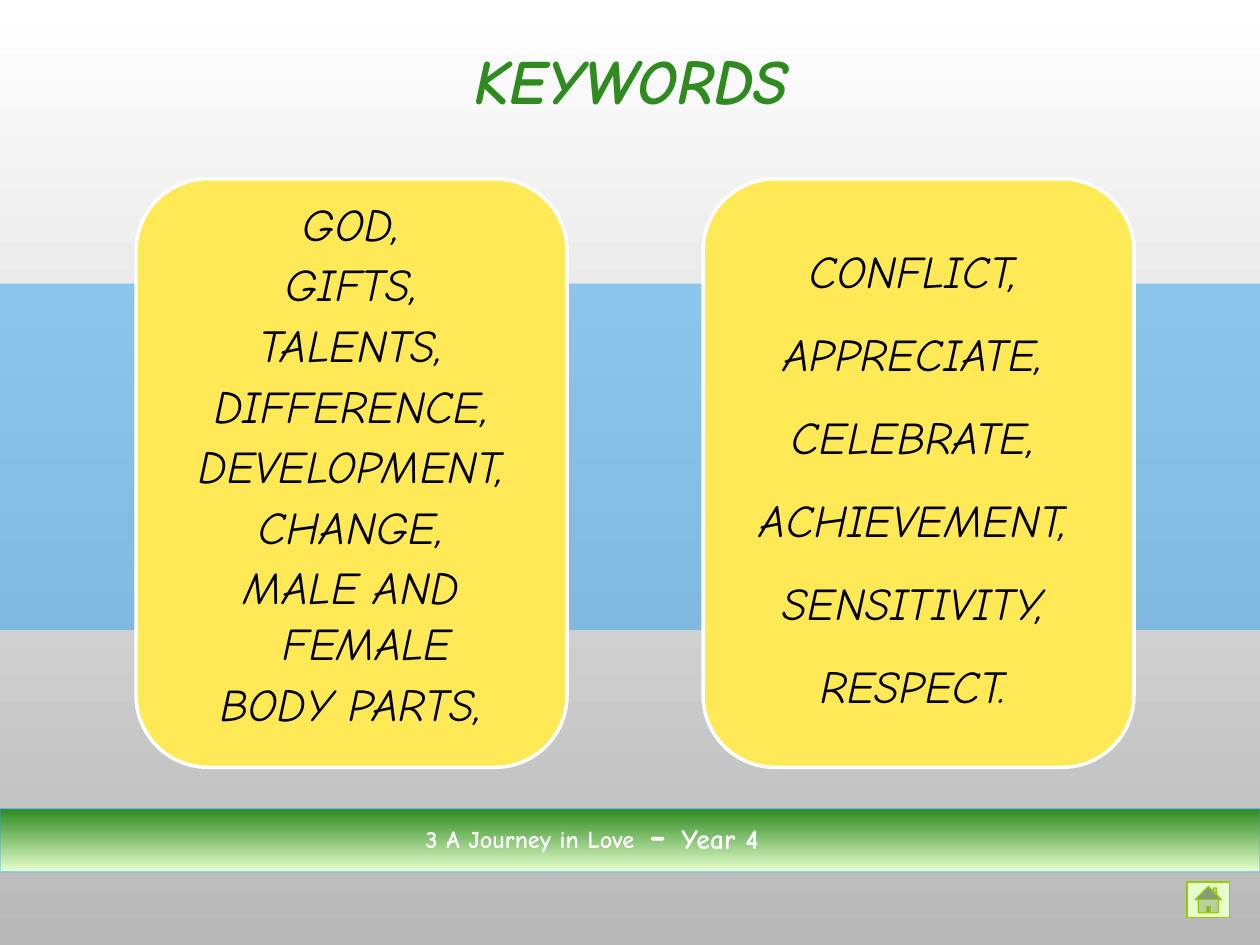
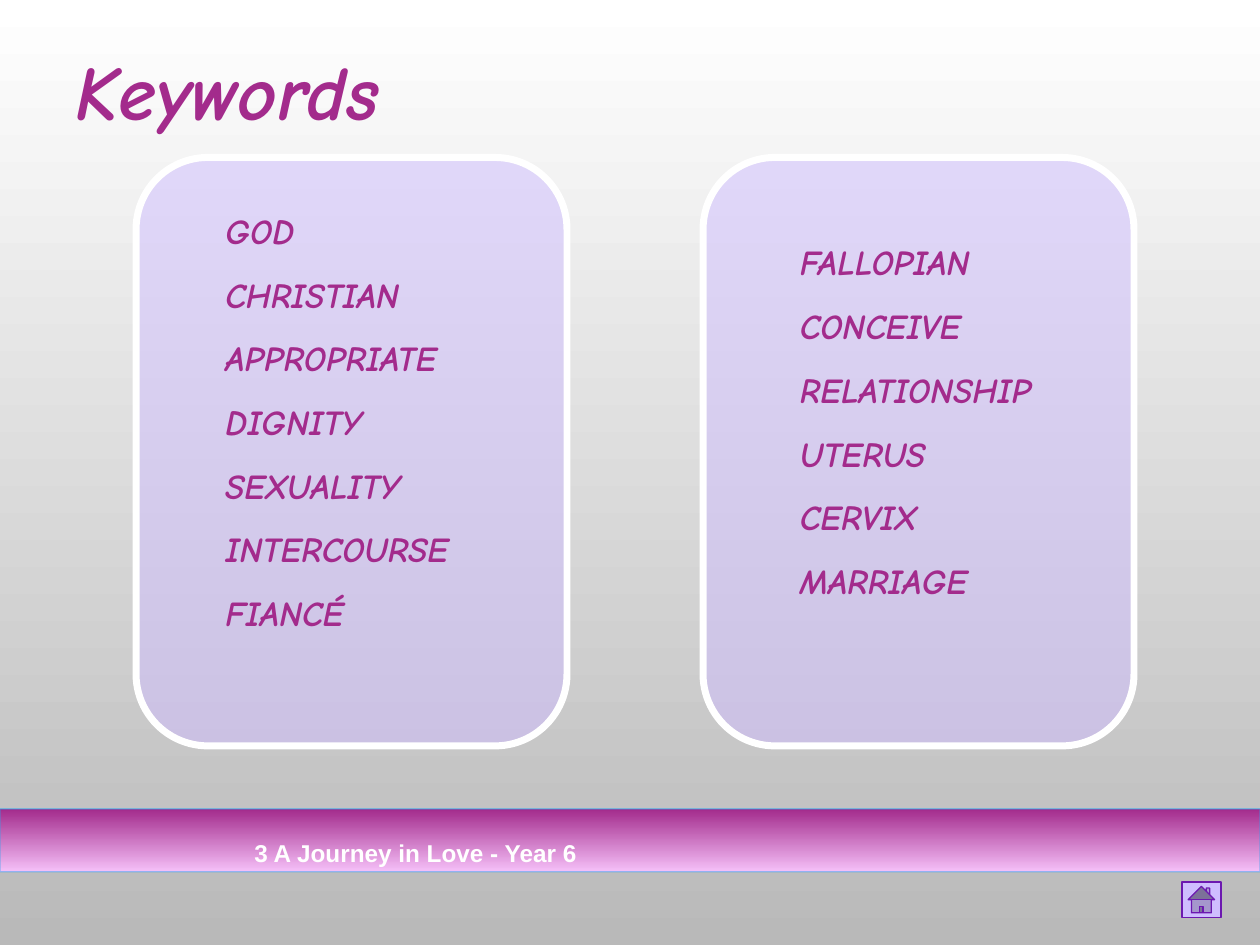
from dataclasses import dataclass, field
from typing import Any

from lxml import etree
from pptx import Presentation
from pptx.dml.color import RGBColor
from pptx.enum.shapes import MSO_SHAPE
from pptx.enum.text import MSO_ANCHOR, PP_ALIGN
from pptx.oxml.ns import qn
from pptx.util import Inches, Pt

RECTANGLE = MSO_SHAPE.RECTANGLE
ROUNDED = MSO_SHAPE.ROUNDED_RECTANGLE
HOME = MSO_SHAPE.ACTION_BUTTON_HOME
TOP, MIDDLE = MSO_ANCHOR.TOP, MSO_ANCHOR.MIDDLE
LEFT, CENTER = PP_ALIGN.LEFT, PP_ALIGN.CENTER

COLORS = {
    "white": "FFFFFF",
    "grey": "B9B9B9",
    "black": "000000",
    "sky": "2FA3EE",
    "yellow": "FFE957",
    "green": "2F8B20",
    "mint": "E6FFCF",
    "lime": "99CC00",
    "magenta": "A32B8C",
    "pink": "F5C0F8",
    "lilac": "CFBDFF",
    "violet": "6C18B0",
}
SCRIPT_FONT = "Comic Neue"
CARD_LEFT, CARD_PITCH = 1.08, 4.5
CARD_WIDTH, CARD_HEIGHT = 3.42, 4.67
HANGING_INDENT = 0.25
RAISED = "2000"


@dataclass(frozen=True)
class Box:
    left: float
    top: float
    width: float
    height: float

    def lengths(self) -> list[int]:
        return [Inches(value) for value in (self.left, self.top, self.width, self.height)]


@dataclass(frozen=True)
class Run:
    text: str
    size: float
    color: str
    font: str = SCRIPT_FONT
    bold: bool = True
    italic: bool = False
    raised: bool = False


@dataclass(frozen=True)
class TextStyle:
    frame: dict[str, Any] = field(default_factory=dict)
    paragraph: dict[str, Any] = field(default_factory=dict)
    space_before: float = 0
    hanging: bool = False


@dataclass(frozen=True)
class WordList:
    box: Box
    words: list[str]
    style: TextStyle


@dataclass(frozen=True)
class Surface:
    fill: str
    line: str | None = None
    line_width: float = 0.75
    fill_alpha: int = 100
    line_alpha: int = 100
    fade_to: str | None = None


@dataclass(frozen=True)
class KeywordSlide:
    title: Run
    title_box: Box
    title_style: TextStyle
    card_top: float
    card: Surface
    word_format: dict[str, Any]
    word_lists: list[WordList]
    band: Surface
    footer_box: Box
    footer: list[Run]
    footer_wraps: bool
    home_box: Box
    home: Surface
    stripe: Surface | None = None


NO_INSETS = dict.fromkeys(("margin_left", "margin_top", "margin_right", "margin_bottom"), 0)
CENTERED_FRAME = {**NO_INSETS, "vertical_anchor": MIDDLE}


def color_of(name: str) -> RGBColor:
    return RGBColor.from_string(COLORS[name])


def apply(target: Any, values: dict[str, Any]) -> None:
    for name, value in values.items():
        setattr(target, name, value)


def set_alpha(fill: Any, percent: int) -> None:
    if percent < 100:
        color = fill.find(f"{qn('a:solidFill')}/{qn('a:srgbClr')}")
        etree.SubElement(color, qn("a:alpha")).set("val", str(percent * 1000))


def fade(fill: Any, start: str, end: str) -> None:
    fill.gradient()
    fill.gradient_angle = 270
    for stop, name, position in zip(fill.gradient_stops, (start, end), (0, 1)):
        stop.color.rgb = color_of(name)
        stop.position = position


def add_surface(slide: Any, kind: Any, box: Box, surface: Surface) -> None:
    shape = slide.shapes.add_shape(kind, *box.lengths())
    shape.shadow.inherit = False
    if surface.fade_to:
        fade(shape.fill, surface.fill, surface.fade_to)
    else:
        shape.fill.solid()
        shape.fill.fore_color.rgb = color_of(surface.fill)
        set_alpha(shape.element.spPr, surface.fill_alpha)
    if surface.line:
        shape.line.color.rgb = color_of(surface.line)
        shape.line.width = Pt(surface.line_width)
        set_alpha(shape.element.spPr.find(qn("a:ln")), surface.line_alpha)
    else:
        shape.line.fill.background()


def add_text(slide: Any, box: Box, paragraphs: list[list[Run]], style: TextStyle) -> None:
    frame = slide.shapes.add_textbox(*box.lengths()).text_frame
    apply(frame, {"word_wrap": True, **style.frame})
    for index, runs in enumerate(paragraphs):
        paragraph = frame.add_paragraph() if index else frame.paragraphs[0]
        apply(paragraph, style.paragraph)
        if index and style.space_before:
            paragraph.space_before = Pt(style.space_before)
        if style.hanging:
            properties = paragraph._p.get_or_add_pPr()
            properties.set("marL", str(Inches(HANGING_INDENT)))
            properties.set("indent", str(-Inches(HANGING_INDENT)))
        for item in runs:
            run = paragraph.add_run()
            run.text = item.text
            apply(run.font, {"name": item.font, "size": Pt(item.size),
                             "bold": item.bold, "italic": item.italic})
            run.font.color.rgb = color_of(item.color)
            if item.raised:
                run._r.get_or_add_rPr().set("baseline", RAISED)


def draw(presentation: Any, content: KeywordSlide) -> None:
    slide = presentation.slides.add_slide(presentation.slide_layouts[6])
    fade(slide.background.fill, "white", "grey")
    if content.stripe:
        add_surface(slide, RECTANGLE, Box(0, 2.25, 10, 2.75), content.stripe)
    for column, word_list in enumerate(content.word_lists):
        card_box = Box(CARD_LEFT + column * CARD_PITCH, content.card_top, CARD_WIDTH, CARD_HEIGHT)
        add_surface(slide, ROUNDED, card_box, content.card)
        words = [[Run(word, **content.word_format)] for word in word_list.words]
        add_text(slide, word_list.box, words, word_list.style)
    add_text(slide, content.title_box, [[content.title]], content.title_style)
    add_surface(slide, RECTANGLE, Box(0, 6.42, 10, 0.5), content.band)
    footer_style = TextStyle(frame={"word_wrap": content.footer_wraps})
    add_text(slide, content.footer_box, [content.footer], footer_style)
    add_surface(slide, HOME, content.home_box, content.home)


def band_surface(start: str, end: str) -> Surface:
    return Surface(start, "sky", line_alpha=50, fade_to=end)


YEAR_SIX_WORDS = TextStyle({"vertical_anchor": TOP}, {"alignment": LEFT, "line_spacing": 1.1}, 10, True)

SLIDES = [
    KeywordSlide(
        title=Run("KEYWORDS", 36, "green", italic=True),
        title_box=Box(0.51, 0.17, 9, 1),
        title_style=TextStyle(CENTERED_FRAME, {"alignment": CENTER, "line_spacing": 0.9}),
        card_top=1.42,
        card=Surface("yellow", "white", 2),
        word_format={"size": 26, "color": "black", "bold": False, "italic": True},
        word_lists=[
            WordList(
                Box(1.25, 1.42, 3.08, 4.5),
                ["GOD,", "GIFTS,", "TALENTS,", "DIFFERENCE,", "DEVELOPMENT,", "CHANGE,",
                 "MALE AND FEMALE", "BODY PARTS,"],
                TextStyle(CENTERED_FRAME, {"alignment": CENTER, "line_spacing": Pt(32)}, 2.6, True),
            ),
            WordList(
                Box(5.75, 1.5, 3, 4.5),
                ["CONFLICT,", "APPRECIATE,", "CELEBRATE,", "ACHIEVEMENT,", "SENSITIVITY,", "RESPECT."],
                TextStyle(CENTERED_FRAME, {"alignment": CENTER, "line_spacing": 1.2}, 10, True),
            ),
        ],
        band=band_surface("green", "mint"),
        footer_box=Box(3.28, 6.36, 3.61, 0.5),
        footer=[
            Run("3 A Journey in Love", 24, "white", raised=True),
            Run(" - ", 24, "white"),
            Run("Year 4", 16, "white"),
        ],
        footer_wraps=False,
        home_box=Box(9.42, 7, 0.34, 0.28),
        home=Surface("mint", "lime"),
        stripe=Surface("sky", fill_alpha=50),
    ),
    KeywordSlide(
        title=Run("Keywords", 44, "magenta", italic=True),
        title_box=Box(0.5, 0.25, 9, 0.92),
        title_style=TextStyle({"vertical_anchor": MIDDLE}),
        card_top=1.25,
        card=Surface("lilac", "white", 4, fill_alpha=50),
        word_format={"size": 20, "color": "magenta", "italic": True},
        word_lists=[
            WordList(
                Box(1.69, 1.58, 2.31, 4),
                ["GOD", "CHRISTIAN", "APPROPRIATE", "DIGNITY", "SEXUALITY", "INTERCOURSE", "FIANCÉ"],
                YEAR_SIX_WORDS,
            ),
            WordList(
                Box(6.25, 1.83, 2.44, 3.75),
                ["FALLOPIAN", "CONCEIVE", "RELATIONSHIP", "UTERUS", "CERVIX", "MARRIAGE"],
                YEAR_SIX_WORDS,
            ),
        ],
        band=band_surface("magenta", "pink"),
        footer_box=Box(1.92, 6.47, 6.25, 0.37),
        footer=[Run("3 A Journey in Love - Year 6", 24, "white", "Arial", raised=True)],
        footer_wraps=True,
        home_box=Box(9.38, 7, 0.31, 0.28),
        home=Surface("lilac", "violet"),
    ),
]


def main() -> None:
    presentation = Presentation()
    presentation.slide_width = Inches(10)
    presentation.slide_height = Inches(7.5)
    for content in SLIDES:
        draw(presentation, content)
    presentation.save("out.pptx")


if __name__ == "__main__":
    main()
